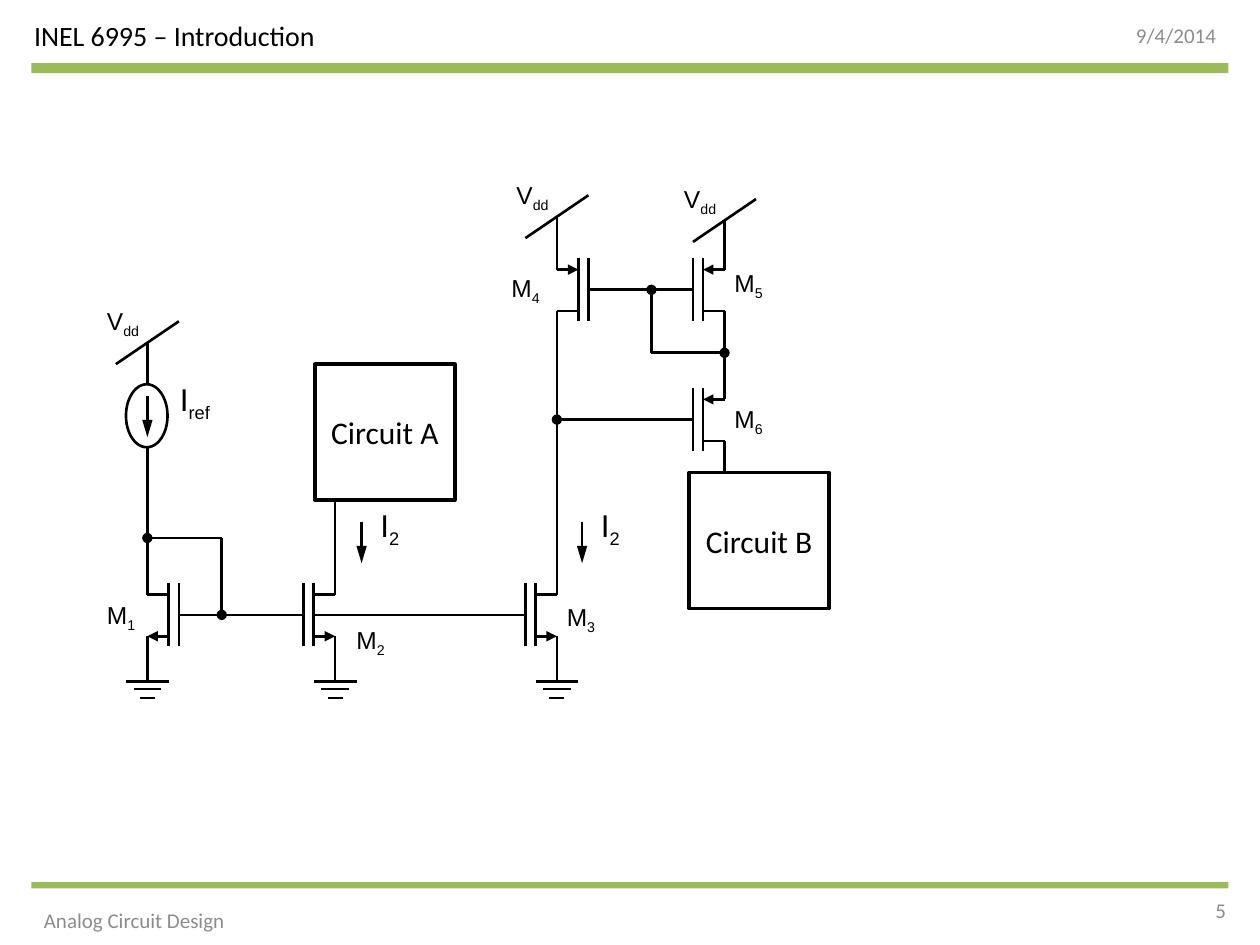
from dataclasses import dataclass
from typing import NamedTuple

from lxml.etree import SubElement
from pptx import Presentation
from pptx.dml.color import RGBColor
from pptx.enum.shapes import MSO_CONNECTOR as Link, MSO_SHAPE as Preset
from pptx.enum.text import MSO_ANCHOR as Anchor, MSO_AUTO_SIZE as Fit, PP_ALIGN as Align
from pptx.oxml.ns import qn
from pptx.util import Inches, Pt


@dataclass(frozen=True)
class Theme:
    ink: RGBColor = RGBColor(0, 0, 0)
    muted: RGBColor = RGBColor(0x8C, 0x8C, 0x8C)
    band: RGBColor = RGBColor(0x9B, 0xBB, 0x59)
    body_font: str = "Calibri"
    symbol_font: str = "Arial"
    title_size: float = 16
    note_size: float = 12
    block_size: float = 18
    current_size: float = 18
    device_size: float = 14
    wire: float = 1.5
    border: float = 2


THEME = Theme()


class Wire(NamedTuple):
    x1: float
    y1: float
    x2: float
    y2: float
    end: str = ""


class Transistor(NamedTuple):
    name: str
    x: float          # drain and source leg
    y: float          # gate height
    side: int         # 1: gate to the right, -1: gate to the left
    pmos: bool
    label_x: float
    label_y: float


class Block(NamedTuple):
    name: str
    x: float
    y: float


class Note(NamedTuple):
    text: str
    x: float
    y: float
    width: float
    align: Align


def write(frame, text: str, *, sub: str = "", size: float, font: str = THEME.body_font,
          color: RGBColor = THEME.ink, align: Align = Align.LEFT,
          anchor: Anchor = Anchor.MIDDLE, wrap: bool = True) -> None:
    """Put text, with an optional subscript, in a text frame."""
    frame.word_wrap, frame.auto_size, frame.vertical_anchor = wrap, Fit.NONE, anchor
    line = frame.paragraphs[0]
    line.alignment = align
    for part in filter(None, (text, sub)):
        run = line.add_run()
        run.text = part
        run.font.size, run.font.name = Pt(size), font
        run.font.color.rgb = color
    if sub:
        run._r.get_or_add_rPr().set("baseline", "-25000")


def add_box(slide, x: float, y: float, width: float, height: float):
    return slide.shapes.add_textbox(*map(Inches, (x, y, width, height)))


def add_symbol(slide, text: str, sub: str, x: float, y: float,
               width: float, size: float = THEME.device_size) -> None:
    box = add_box(slide, x, y, width, 0.34 if size == THEME.device_size else 0.4)
    write(box.text_frame, text, sub=sub, size=size, font=THEME.symbol_font,
          anchor=Anchor.TOP, wrap=False)


def add_wire(slide, wire: Wire, length: str = "med") -> None:
    link = slide.shapes.add_connector(Link.STRAIGHT, *map(Inches, wire[:4]))
    link.line.color.rgb, link.line.width = THEME.ink, Pt(THEME.wire)
    if wire.end:
        SubElement(link.line._get_or_add_ln(), qn("a:tailEnd"),
                   type=wire.end, w="med", len=length)
    SubElement(link._element.spPr, qn("a:effectLst"))


def add_shape(slide, preset: Preset, x: float, y: float, width: float, height: float,
              fill: RGBColor | None = None, border: float = 0):
    shape = slide.shapes.add_shape(preset, *map(Inches, (x, y, width, height)))
    shape.shadow.inherit = False
    if fill is None:
        shape.fill.background()
    else:
        shape.fill.solid()
        shape.fill.fore_color.rgb = fill
    if border:
        shape.line.color.rgb, shape.line.width = THEME.ink, Pt(border)
    else:
        shape.line.fill.background()
    return shape


def add_transistor(slide, device: Transistor) -> None:
    x, y = device.x, device.y
    channel, gate, lead = (x + device.side * gap for gap in (0.17, 0.25, 0.5))
    upper, lower = y - 0.16, y + 0.17
    if device.pmos:
        stubs = (Wire(x, upper, channel, upper, "triangle"), Wire(x, lower, channel, lower))
    else:
        stubs = (Wire(x, upper, channel, upper), Wire(channel, lower, x, lower, "triangle"))
    for wire in (Wire(x, y - 0.41, x, upper), Wire(x, lower, x, y + 0.42), *stubs,
                 Wire(channel, y - 0.25, channel, y + 0.25),
                 Wire(gate, y - 0.25, gate, y + 0.25), Wire(gate, y, lead, y)):
        add_wire(slide, wire)
    add_symbol(slide, "M", device.name, device.label_x, device.label_y, 0.44)


def add_ground(slide, x: float, y: float) -> None:
    add_wire(slide, Wire(x, y, x, y + 0.12))
    for drop, half in ((0.12, 0.17), (0.18, 0.11), (0.25, 0.06)):
        add_wire(slide, Wire(x - half, y + drop, x + half, y + drop))


def add_supply(slide, x: float, y: float) -> None:
    add_wire(slide, Wire(x, y, x, y + 0.17))
    add_wire(slide, Wire(x + 0.25, y - 0.17, x - 0.25, y + 0.17))
    add_symbol(slide, "V", "dd", x - 0.42, y - 0.34, 0.48)


def add_current(slide, name: str, wire: Wire, x: float, y: float, width: float) -> None:
    add_wire(slide, wire, length="lg")
    add_symbol(slide, "I", name, x, y, width, THEME.current_size)


REF, LEFT, MIDDLE, RIGHT = 1.17, 2.66, 4.42, 5.75   # the four circuit branches
TRANSISTORS = (
    Transistor("1", REF, 4.88, 1, False, 0.75, 4.71),
    Transistor("2", LEFT, 4.88, -1, False, 2.73, 4.91),
    Transistor("3", MIDDLE, 4.88, -1, False, 4.4, 4.73),
    Transistor("4", MIDDLE, 2.3, 1, True, 3.96, 2.12),
    Transistor("5", RIGHT, 2.3, -1, True, 5.73, 2.08),
    Transistor("6", RIGHT, 3.33, -1, True, 5.73, 3.16),
)
WIRES = (
    Wire(REF, 2.89, REF, 3.05), Wire(REF, 3.55, REF, 4.48),
    Wire(1.76, 4.27, REF, 4.27, "oval"), Wire(1.76, 4.27, 1.76, 4.88, "oval"),
    Wire(1.62, 4.88, 2.21, 4.88), Wire(2.48, 4.88, 3.92, 4.88),
    Wire(LEFT, 3.97, LEFT, 4.47), Wire(MIDDLE, 2.69, MIDDLE, 4.48),
    Wire(4.84, 2.3, 5.3, 2.3), Wire(5.17, 2.8, 5.17, 2.3, "oval"),
    Wire(5.17, 2.8, RIGHT, 2.8, "oval"), Wire(RIGHT, 2.61, RIGHT, 3.06),
    Wire(5.3, 3.33, MIDDLE, 3.33, "oval"),
)
BLOCKS = (Block("Circuit A", 2.5, 2.89), Block("Circuit B", 5.47, 3.75))
NOTES = (
    Note("9/4/2014", 7.42, 0.08, 2.33, Align.RIGHT),
    Note("Analog Circuit Design", 0.25, 7.1, 1.75, Align.LEFT),
    Note("5", 7.5, 7.02, 2.33, Align.RIGHT),
)


def main() -> None:
    deck = Presentation()
    deck.slide_width, deck.slide_height = Inches(10), Inches(7.5)
    slide = deck.slides.add_slide(deck.slide_layouts[5])

    # Title, bands and notes
    title = slide.shapes.title
    title.left, title.top, title.width, title.height = map(Inches, (0.17, 0.08, 3.33, 0.4))
    write(title.text_frame, "INEL 6995 – Introduction", size=THEME.title_size)
    for y, height in ((0.5, 0.08), (7, 0.05)):
        add_shape(slide, Preset.RECTANGLE, 0.25, y, 9.5, height, fill=THEME.band)
    for note in NOTES:
        box = add_box(slide, note.x, note.y, note.width, 0.4)
        write(box.text_frame, note.text, size=THEME.note_size, color=THEME.muted,
              align=note.align)

    # Wiring, supplies and grounds
    for wire in WIRES:
        add_wire(slide, wire)
    for x, y in ((REF, 2.72), (MIDDLE, 1.72), (RIGHT, 1.75)):
        add_supply(slide, x, y)
    for x in (REF, LEFT, MIDDLE):
        add_ground(slide, x, 5.29)

    # Devices, currents and circuit blocks
    for device in TRANSISTORS:
        add_transistor(slide, device)
    add_shape(slide, Preset.OVAL, 1, 3.05, 0.33, 0.5, border=THEME.wire)
    add_current(slide, "ref", Wire(REF, 3.14, REF, 3.47, "triangle"), 1.33, 2.97, 0.47)
    for x in (2.87, 4.62):
        add_current(slide, "2", Wire(x, 4.14, x, 4.47, "triangle"), x + 0.05, 3.97, 0.36)
    for block in BLOCKS:
        box = add_shape(slide, Preset.RECTANGLE, block.x, block.y, 1.11, 1.08,
                        border=THEME.border)
        write(box.text_frame, block.name, size=THEME.block_size, align=Align.CENTER)
    deck.save("out.pptx")


if __name__ == "__main__":
    main()
